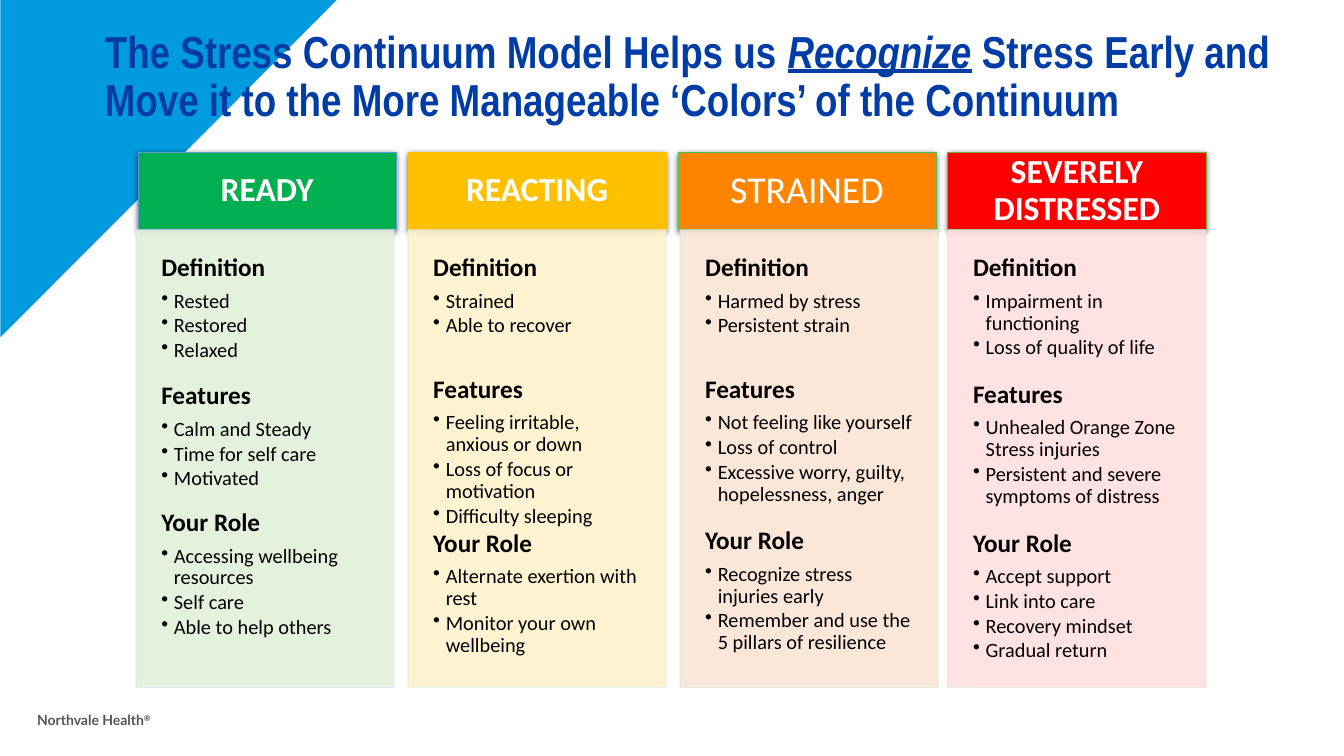
from lxml import etree
from pptx import Presentation
from pptx.dml.color import RGBColor
from pptx.enum.shapes import MSO_SHAPE
from pptx.enum.text import MSO_ANCHOR, MSO_AUTO_SIZE, PP_ALIGN
from pptx.oxml import parse_xml
from pptx.oxml.ns import nsdecls, qn
from pptx.util import Inches, Pt

RECT, CORNER = MSO_SHAPE.RECTANGLE, MSO_SHAPE.RIGHT_TRIANGLE
TOP, MIDDLE = MSO_ANCHOR.TOP, MSO_ANCHOR.MIDDLE
LEFT, CENTER = PP_ALIGN.LEFT, PP_ALIGN.CENTER
NO_FIT = MSO_AUTO_SIZE.NONE

# Grid of the slide, in inches
WIDTH, HEIGHT = 13.33, 7.5
COL_X, COL_STEP, COL_W = 1.37, 2.677, 2.56
HEAD_Y, HEAD_H = 1.51, 0.77
BODY_Y, BODY_H = HEAD_Y + HEAD_H, 4.54

WHITE = RGBColor(0xFF, 0xFF, 0xFF)
BLACK = RGBColor(0, 0, 0)
NAVY = RGBColor(0x00, 0x3C, 0xA5)
SKY = RGBColor(0x00, 0x9A, 0xDF)
GRAY = RGBColor(0x53, 0x56, 0x59)
GREEN, GREEN_EDGE = RGBColor(0x00, 0xB0, 0x50), RGBColor(0x5B, 0x9B, 0xD5)
GREEN_PALE, GREEN_RIM = RGBColor(0xE2, 0xF0, 0xD9), RGBColor(0xD2, 0xDE, 0xEF)
GOLD = RGBColor(0xFF, 0xC0, 0x00)
GOLD_PALE, GOLD_RIM = RGBColor(0xFF, 0xF2, 0xCC), RGBColor(0xD0, 0xEC, 0xEA)
ORANGE, ORANGE_EDGE = RGBColor(0xFF, 0x85, 0x00), RGBColor(0x49, 0xBF, 0x64)
ORANGE_PALE, ORANGE_RIM = RGBColor(0xFB, 0xE5, 0xD6), RGBColor(0xD0, 0xE7, 0xD8)
RED, RED_EDGE = RGBColor(0xFF, 0x00, 0x00), RGBColor(0x70, 0xAD, 0x47)
RED_PALE, RED_RIM = RGBColor(0xFF, 0xDF, 0xDF), RGBColor(0xD5, 0xE3, 0xCF)

# Stage: name, size, bold, head fill and edge, body fill and rim,
# body shift, then sections as (heading, gap above in points, items)
STAGES = [
    ("READY", 24, True, GREEN, GREEN_EDGE, GREEN_PALE, GREEN_RIM, -0.02, [
        ("Definition", 0, ["Rested", "Restored", "Relaxed"]),
        ("Features", 13, ["Calm and Steady", "Time for self care",
                          "Motivated"]),
        ("Your Role", 12, ["Accessing wellbeing resources", "Self care",
                           "Able to help others"])]),
    ("REACTING", 24, True, GOLD, GOLD, GOLD_PALE, GOLD_RIM, 0, [
        ("Definition", 0, ["Strained", "Able to recover"]),
        ("Features", 26, ["Feeling irritable, anxious or down",
                          "Loss of focus or motivation",
                          "Difficulty sleeping"]),
        ("Your Role", 0, ["Alternate exertion with rest",
                          "Monitor your own wellbeing"])]),
    ("STRAINED", 27, False, ORANGE, ORANGE_EDGE, ORANGE_PALE, ORANGE_RIM,
     0.02, [
        ("Definition", 0, ["Harmed by stress", "Persistent strain"]),
        ("Features", 26, ["Not feeling like yourself", "Loss of control",
                          "Excessive worry, guilty, hopelessness, anger"]),
        ("Your Role", 14, ["Recognize stress injuries early",
                           "Remember and use the 5 pillars of resilience"])]),
    ("SEVERELY DISTRESSED", 24, True, RED, RED_EDGE, RED_PALE, RED_RIM, 0, [
        ("Definition", 0, ["Impairment in functioning",
                           "Loss of quality of life"]),
        ("Features", 14, ["Unhealed Orange Zone Stress injuries",
                          "Persistent and severe symptoms of distress"]),
        ("Your Role", 14, ["Accept support", "Link into care",
                           "Recovery mindset", "Gradual return"])]),
]


def style(run, face, size, color, bold):
    font = run.font
    font.name, font.size, font.bold = face, Pt(size), bold
    font.color.rgb = color


def frame(shape, inset, anchor):
    box = shape.text_frame
    box.word_wrap, box.auto_size = True, NO_FIT
    box.vertical_anchor = anchor
    box.margin_left = box.margin_right = Inches(inset)
    box.margin_top = box.margin_bottom = Inches(inset)
    return box


def panel(slide, kind, x, y, w, h, fill, edge=None):
    shape = slide.shapes.add_shape(
        kind, Inches(x), Inches(y), Inches(w), Inches(h))
    shape.shadow.inherit = False
    shape.fill.solid()
    shape.fill.fore_color.rgb = fill
    if edge is None:
        shape.line.fill.background()
    else:
        shape.line.color.rgb = edge
        shape.line.width = Pt(0.5)
    return shape


def shade(shape):
    """Soft shadow just below the shape."""
    effects = shape._element.spPr.find(qn("a:effectLst"))
    effects.append(parse_xml(
        f'<a:outerShdw {nsdecls("a")} blurRad="{Pt(4.5)}" dist="{Pt(1.5)}" '
        'dir="5400000" rotWithShape="0"><a:srgbClr val="000000">'
        '<a:alpha val="63000"/></a:srgbClr></a:outerShdw>'))


def fade(shape):
    """Make fill and line 90% opaque."""
    for color in list(shape._element.spPr.iter(qn("a:srgbClr"))):
        etree.SubElement(color, qn("a:alpha")).set("val", "90000")


def bullet(para):
    para.level = 1
    props = para._p.get_or_add_pPr()
    indent = Inches(0.125)
    props.set("marL", str(indent))
    props.set("indent", str(-indent))
    etree.SubElement(props, qn("a:buChar")).set("char", "•")


def line(box, text, size, color, bold, align=LEFT, before=0, after=0):
    first = box.paragraphs[0]
    para = box.add_paragraph() if first.runs else first
    para.text = text
    para.alignment, para.line_spacing = align, 0.9
    para.space_before, para.space_after = Pt(before), Pt(after)
    style(para.runs[0], "Calibri", size, color, bold)
    return para


def stage(slide, x, name, size, bold, fill, edge, pale, rim, shift, parts):
    head = panel(slide, RECT, x, HEAD_Y, COL_W, HEAD_H, fill, edge)
    shade(head)
    line(frame(head, 0.2, MIDDLE), name, size, WHITE, bold, CENTER)

    body = panel(slide, RECT, x + shift, BODY_Y, COL_W, BODY_H, pale, rim)
    fade(body)
    box = frame(body, 0.25, TOP)
    for heading, gap, items in parts:
        line(box, heading, 18, BLACK, True, before=gap, after=6)
        for item in items:
            bullet(line(box, item, 14.5, BLACK, False, after=2))


def title(slide):
    shape = slide.shapes.title
    shape.left, shape.top = Inches(1.04), Inches(0.21)
    shape.width, shape.height = Inches(11.81), Inches(1.13)
    para = frame(shape, 0, MIDDLE).paragraphs[0]
    para.alignment, para.line_spacing = LEFT, 0.9
    for text, marked in [
            ("The Stress Continuum Model Helps us ", False),
            ("Recognize", True),
            (" Stress Early and Move it to the More Manageable "
             "‘Colors’ of the Continuum", False)]:
        run = para.add_run()
        run.text = text
        style(run, "Arial Narrow", 32, NAVY, True)
        run.font.italic = run.font.underline = marked


def corner(slide):
    shape = panel(slide, CORNER, 0, 0, 3.35, 3.34, SKY)
    shape.rotation = 90
    slide.shapes._spTree.insert(2, shape._element)  # behind the title


def footer(slide):
    shape = slide.shapes.add_textbox(
        Inches(0.27), Inches(6.98), Inches(1.4), Inches(0.28))
    shape.text_frame.word_wrap = False
    para = shape.text_frame.paragraphs[0]
    para.line_spacing = 1.2
    for text in ("Northvale Health", "®"):
        run = para.add_run()
        run.text = text
        style(run, "Lato", 10, GRAY, True)
    run._r.get_or_add_rPr().set("baseline", "30000")


def main():
    deck = Presentation()
    deck.slide_width, deck.slide_height = Inches(WIDTH), Inches(HEIGHT)
    slide = deck.slides.add_slide(deck.slide_layouts[5])
    corner(slide)
    title(slide)
    for index, data in enumerate(STAGES):
        stage(slide, COL_X + index * COL_STEP, *data)
    footer(slide)
    deck.save("out.pptx")


if __name__ == "__main__":
    main()
